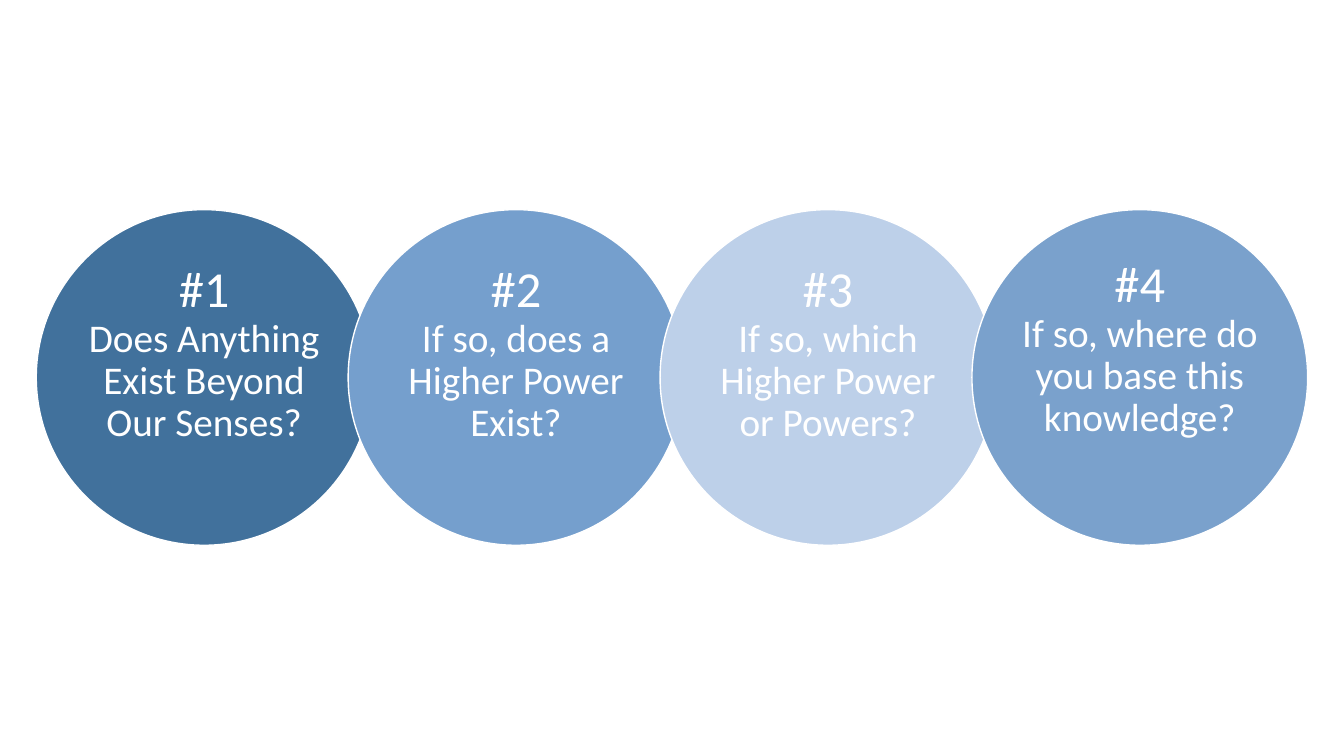
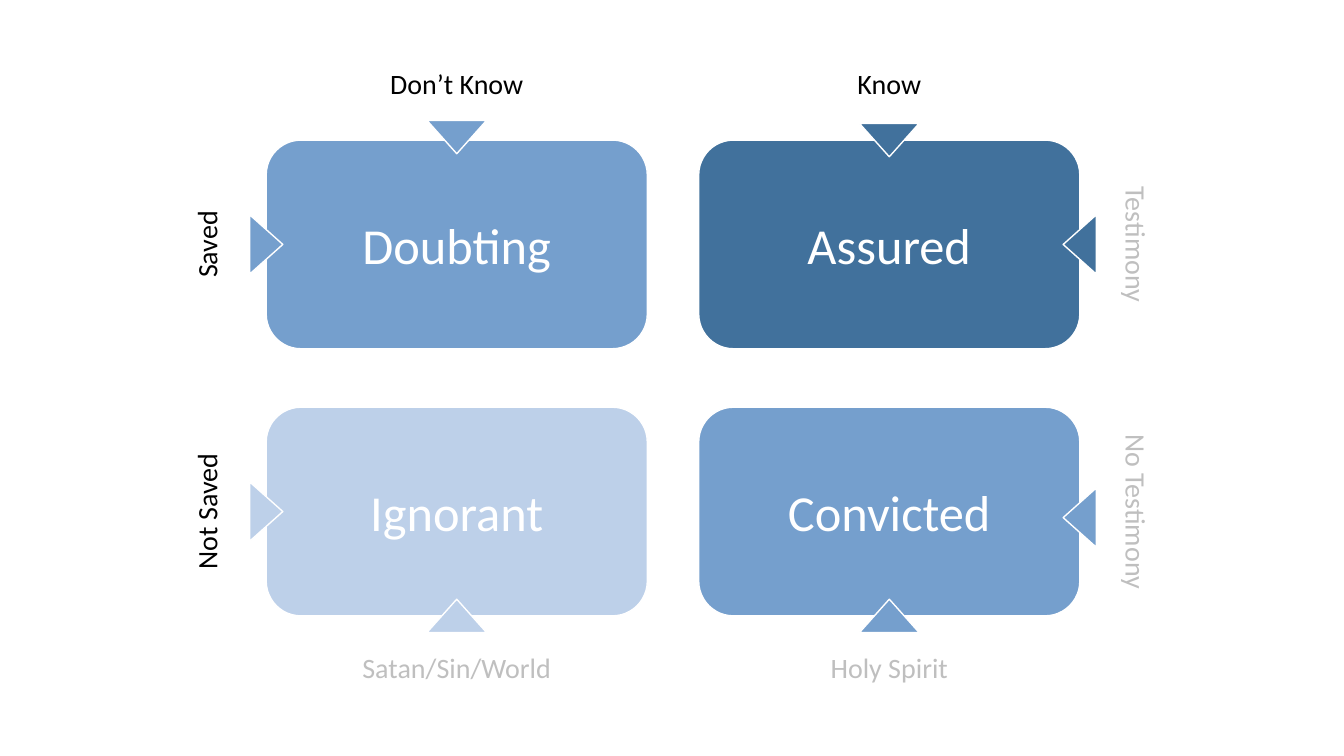
from dataclasses import dataclass

from pptx import Presentation, util as u
from pptx.dml.color import RGBColor
from pptx.enum import shapes, text

SHAPE = shapes.MSO_SHAPE


@dataclass(frozen=True)
class Theme:
    font: str = "Calibri"
    dark: str = "41719C"
    mid: str = "759FCD"
    pale: str = "BDD0E9"
    soft: str = "7AA1CC"
    white: str = "FFFFFF"
    black: str = "000000"
    grey: str = "BFBFBF"
    heading: int = 36
    body: int = 28
    label: int = 20
    line: int = 1


@dataclass(frozen=True)
class Side:
    """Direction from a box's centre, label distance and rotations."""
    dx: int
    dy: int
    gap: float
    pointer_turn: int
    label_turn: int
    color: str


T = Theme()
WIDTH, HEIGHT = 13.33, 7.5

SIDES = {
    "top": Side(0, -1, 0.52, 180, 0, T.black),
    "bottom": Side(0, 1, 0.55, 0, 0, T.grey),
    "left": Side(-1, 0, 0.55, 90, 270, T.black),
    "right": Side(1, 0, 0.52, 270, 90, T.grey),
}

QUESTIONS = [
    ("#1", "Does Anything Exist Beyond Our Senses?", T.dark, 0.05),
    ("#2", "If so, does a Higher Power Exist?", T.mid, 0.05),
    ("#3", "If so, which Higher Power or Powers?", T.pale, 0.05),
    ("#4", "If so, where do you base this knowledge?", T.soft, 0),
]

# column, row, name, fill, {side: (label, pointer shift along that side's axes)}
QUADRANTS = [
    (0, 0, "Doubting", T.mid,
     {"top": ("Don’t Know", (0, -0.03)), "left": ("Saved", (0, 0))}),
    (1, 0, "Assured", T.dark,
     {"top": ("Know", (0, 0)), "right": ("Testimony", (0, 0))}),
    (0, 1, "Ignorant", T.pale,
     {"bottom": ("Satan/Sin/World", (0, 0)), "left": ("Not Saved", (0, 0))}),
    (1, 1, "Convicted", T.mid,
     {"bottom": ("Holy Spirit", (0, 0)), "right": ("No Testimony", (0, 0.06))}),
]


def inches(*lengths):
    return [u.Inches(n) for n in lengths]


def centred(cx, cy, w, h):
    return cx - w / 2, cy - h / 2, w, h


def add_filled(s, kind, box, fill):
    sp = s.shapes.add_shape(kind, *inches(*box))
    sp.shadow.inherit = False
    sp.fill.solid()
    sp.fill.fore_color.rgb = RGBColor.from_string(fill)
    sp.line.color.rgb = RGBColor.from_string(T.white)
    sp.line.width = u.Pt(T.line)
    return sp


def write(sp, lines, color, frame=None, paragraph=None):
    """Fill a shape with centred (text, size) paragraphs."""
    tf = sp.text_frame
    for name, value in {"word_wrap": True, **(frame or {})}.items():
        setattr(tf, name, value)
    for i, (words, size) in enumerate(lines):
        p = tf.add_paragraph() if i else tf.paragraphs[0]
        layout = {"alignment": text.PP_ALIGN.CENTER, **(paragraph or {})}
        for name, value in layout.items():
            setattr(p, name, value)
        r = p.add_run()
        r.text = words
        for name, value in {"name": T.font, "size": u.Pt(size)}.items():
            setattr(r.font, name, value)
        r.font.color.rgb = RGBColor.from_string(color)


def question_chain(s, box):
    """Row of overlapping circles whose diameter is the height of the box."""
    left, top, width, size = box
    pitch = (width - size) / (len(QUESTIONS) - 1)
    for i, (number, question, fill, inset) in enumerate(QUESTIONS):
        sp = add_filled(s, SHAPE.OVAL, (left + i * pitch, top, size, size), fill)
        write(sp, [(number, T.heading), (question, T.body)], T.white,
              {"vertical_anchor": text.MSO_ANCHOR.TOP,
               "margin_left": 0, "margin_right": 0, "margin_bottom": 0,
               "margin_top": u.Inches(inset)},
              {"line_spacing": 0.9, "space_after": u.Pt(0)})


def edge_mark(s, box, side, label, shift, fill):
    """Pointer on the middle of one side of the box, with its label outside."""
    x, y, w, h = box
    cx = x + w / 2 * (1 + side.dx)
    cy = y + h / 2 * (1 + side.dy)
    pointer = add_filled(s, SHAPE.ISOSCELES_TRIANGLE,
                         centred(cx + shift[0], cy + shift[1], 0.59, 0.33), fill)
    pointer.rotation = side.pointer_turn
    sp = s.shapes.add_textbox(*inches(*centred(
        cx + side.dx * side.gap, cy + side.dy * side.gap, 2.5, 0.52)))
    sp.rotation = side.label_turn
    write(sp, [(label, T.label)], side.color)


def quadrant_matrix(s, box):
    left, top, width, height = box
    w, h = 3.78, 2.07
    for col, row, name, fill, marks in QUADRANTS:
        cell = (left + col * (width - w), top + row * (height - h), w, h)
        sp = add_filled(s, SHAPE.ROUNDED_RECTANGLE, cell, fill)
        write(sp, [(name, T.heading)], T.white,
              {"vertical_anchor": text.MSO_ANCHOR.MIDDLE})
        for side, (label, shift) in marks.items():
            edge_mark(s, cell, SIDES[side], label, shift, fill)


def main():
    prs = Presentation()
    prs.slide_width, prs.slide_height = inches(WIDTH, HEIGHT)
    blank = prs.slide_layouts[6]
    regions = [(question_chain, (0.36, 2.08, 12.61, 3.33)),
               (quadrant_matrix, (2.64, 1.39, 8.07, 4.72))]
    for draw, box in regions:
        draw(prs.slides.add_slide(blank), box)
    prs.save("out.pptx")


if __name__ == "__main__":
    main()
